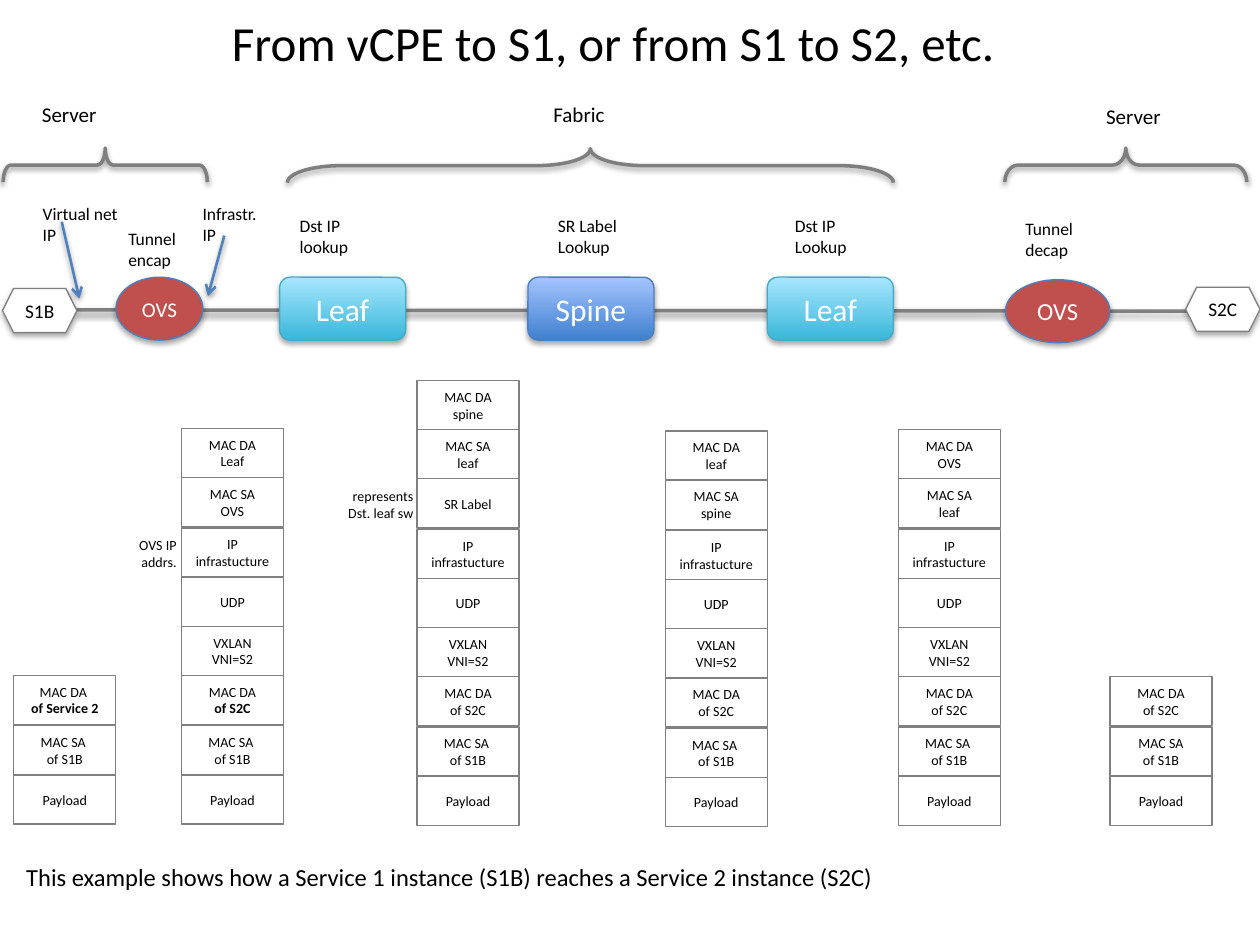
"""Draw the packet header stacks along the path from service S1B to service S2C."""
from dataclasses import dataclass
from typing import Optional

from lxml import etree
from pptx import Presentation, util as u
from pptx.dml.color import RGBColor
from pptx.enum import shapes as s, text as t
from pptx.oxml import ns

PX = u.Inches(1) // 100
LEFT, CENTER, RIGHT = t.PP_ALIGN.LEFT, t.PP_ALIGN.CENTER, t.PP_ALIGN.RIGHT


@dataclass(frozen=True)
class Theme:
    font: str = "Calibri"
    ink: str = "000000"
    white: str = "FFFFFF"
    gray: str = "808080"
    brace: str = "7F7F7F"
    arrow: str = "4F81BD"
    red: str = "C0504D"
    blue_edge: str = "4B7EBC"
    leaf_edge: str = "46AAC5"
    leaf: tuple = ("39B7D8", "A7E6FF")
    spine: tuple = ("3F80CE", "A4C4FF")
    title: int = 28
    device: int = 18
    large: int = 14
    heading: int = 12
    host: int = 11
    note: int = 10
    cell: int = 8
    node_shadow: tuple = (35000, 23000)
    line_shadow: tuple = (38000, 20000)


THEME = Theme()


@dataclass(frozen=True)
class Node:
    text: str
    box: tuple
    kind: s.MSO_SHAPE
    fill: tuple
    edge: str
    size: int
    color: str = THEME.white


@dataclass(frozen=True)
class Label:
    text: str
    box: tuple
    size: int = THEME.note
    align: t.PP_ALIGN = LEFT


@dataclass(frozen=True)
class Stack:
    left: int
    last_top: int
    rows: tuple
    bold: str = ""


@dataclass(frozen=True)
class Brace:
    box: tuple
    curve: float


@dataclass(frozen=True)
class Line:
    ends: tuple
    color: str = THEME.arrow
    width: float = 1.5
    arrow: bool = True


def leaf(left: int) -> Node:
    """Describe a leaf switch."""
    return Node("Leaf", (left, 220, 100, 50), s.MSO_SHAPE.ROUNDED_RECTANGLE,
                THEME.leaf, THEME.leaf_edge, THEME.device)


def switch(box: tuple, size: int) -> Node:
    """Describe a virtual switch."""
    return Node("OVS", box, s.MSO_SHAPE.OVAL, (THEME.red,), THEME.blue_edge, size)


def host(name: str, left: int, top: int) -> Node:
    """Describe a service instance."""
    return Node(name, (left, top, 59, 35), s.MSO_SHAPE.HEXAGON, (THEME.white,),
                THEME.gray, THEME.host, THEME.ink)


NODES = (
    leaf(222),
    Node("Spine", (419, 220, 100, 50), s.MSO_SHAPE.ROUNDED_RECTANGLE,
         THEME.spine, THEME.blue_edge, THEME.device),
    leaf(609),
    switch((798, 222, 83, 50), THEME.large),
    switch((92, 220, 69, 50), THEME.heading),
    host("S1B", 2, 229),
    host("S2C", 941, 228),
)
SOURCE = ("MAC SA \nof S1B", "Payload")
TUNNEL = ("IP\ninfrastucture", "UDP", "VXLAN\nVNI=S2", "MAC DA\nof S2C") + SOURCE
STACKS = (
    Stack(11, 615, ("MAC DA \nof Service 2",) + SOURCE, "of Service 2"),
    Stack(144, 615, ("MAC DA\nLeaf", "MAC SA\nOVS") + TUNNEL, "of S2C"),
    Stack(331, 616, ("MAC DA\nspine", "MAC SA\nleaf", "SR Label") + TUNNEL),
    Stack(528, 617, ("MAC DA\nleaf", "MAC SA\nspine") + TUNNEL),
    Stack(713, 616, ("MAC DA\nOVS", "MAC SA\nleaf") + TUNNEL),
    Stack(881, 616, ("MAC DA\nof S2C", "MAC SA\nof S1B", "Payload")),
)
BRACES = (
    Brace((455, -109, 27, 481), 1.59),
    Brace((880, 35, 27, 192), 0.39),
    Brace((70, 50, 27, 162), 0.23),
)
LABELS = (
    Label("Fabric", (370, 76, 179, 30), THEME.heading, CENTER),
    Label("Server", (810, 77, 179, 30), THEME.heading, CENTER),
    Label("Server", (2, 76, 106, 30), THEME.heading, CENTER),
    Label("represents\nDst. leaf sw", (253, 382, 85, 37), THEME.cell, RIGHT),
    Label("OVS IP addrs.", (89, 421, 61, 37), THEME.cell, RIGHT),
    Label("Dst IP\nlookup", (228, 166, 76, 44)),
    Label("SR Label Lookup", (433, 166, 76, 44)),
    Label("Dst IP Lookup", (621, 166, 76, 44)),
    Label("Infrastr.\nIP", (151, 156, 76, 44)),
    Label("Virtual net\nIP", (24, 156, 85, 44)),
    Label("Tunnel decap", (804, 168, 76, 44)),
    Label("Tunnel encap", (92, 176, 76, 44)),
    Label("This example shows how a Service 1 instance (S1B) reaches a Service 2 instance (S2C)",
          (11, 679, 965, 34), THEME.large),
)
BACKBONE = Line((61, 246, 944, 247), THEME.gray, 2, False)
ARROWS = (Line((178, 187, 165, 235)), Line((49, 176, 63, 237)))


def emu(lengths: tuple) -> list:
    """Turn px lengths into EMU."""
    return [length * PX for length in lengths]


def assign(target, values: dict) -> None:
    """Set each named attribute of the target."""
    for name, value in values.items():
        setattr(target, name, value)


def write(shape, text: str, size: int, color: str = THEME.ink, align=CENTER,
          bold: str = "", **frame_values) -> None:
    """Fill a shape with formatted paragraphs."""
    frame = shape.text_frame
    frame.text = text
    assign(frame, {"word_wrap": True, **frame_values})
    for paragraph in frame.paragraphs:
        paragraph.alignment = align
        for run in paragraph.runs:
            assign(run.font, {"name": THEME.font, "size": u.Pt(size),
                              "bold": run.text == bold})
            run.font.color.rgb = RGBColor.from_string(color)


def outline(shape, color: str, width: float, shadow: Optional[tuple] = None) -> None:
    """Set the line of a shape and its downward shadow, if any."""
    shape.line.color.rgb = RGBColor.from_string(color)
    shape.line.width = u.Pt(width)
    effects = etree.SubElement(shape._element.spPr, ns.qn("a:effectLst"))
    if shadow:
        alpha, distance = shadow
        outer = etree.SubElement(effects, ns.qn("a:outerShdw"), blurRad="40000",
                                 dist=str(distance), dir="5400000", rotWithShape="0")
        tint = etree.SubElement(outer, ns.qn("a:srgbClr"), val=THEME.ink)
        etree.SubElement(tint, ns.qn("a:alpha"), val=str(alpha))


def draw_line(slide, line: Line) -> None:
    """Draw a straight line or arrow."""
    connector = slide.shapes.add_connector(s.MSO_CONNECTOR.STRAIGHT, *emu(line.ends))
    outline(connector, line.color, line.width, THEME.line_shadow)
    if line.arrow:
        stroke = connector._element.spPr.find(ns.qn("a:ln"))
        etree.SubElement(stroke, ns.qn("a:tailEnd"), type="arrow")


def draw_node(slide, node: Node) -> None:
    """Draw a network element with a plain or graded fill."""
    shape = slide.shapes.add_shape(node.kind, *emu(node.box))
    if len(node.fill) == 1:
        shape.fill.solid()
        shape.fill.fore_color.rgb = RGBColor.from_string(node.fill[0])
    else:
        shape.fill.gradient()
        shape.fill.gradient_angle = 90
        for stop, color in zip(shape.fill.gradient_stops, node.fill):
            stop.color.rgb = RGBColor.from_string(color)
    outline(shape, node.edge, 0.75, THEME.node_shadow)
    write(shape, node.text, node.size, node.color, margin_left=0, margin_right=0,
          vertical_anchor=t.MSO_ANCHOR.MIDDLE)


def draw_stack(slide, stack: Stack) -> None:
    """Draw the headers of one packet, ending at the payload."""
    for height, text in enumerate(reversed(stack.rows)):
        top = stack.last_top - round(39.3 * height)
        cell = slide.shapes.add_shape(s.MSO_SHAPE.RECTANGLE, *emu((stack.left, top, 81, 39)))
        cell.fill.background()
        outline(cell, THEME.gray, 0.75)
        write(cell, text, THEME.cell, bold=stack.bold, vertical_anchor=t.MSO_ANCHOR.MIDDLE)


def draw_brace(slide, brace: Brace) -> None:
    """Draw a brace turned to open downward."""
    shape = slide.shapes.add_shape(s.MSO_SHAPE.LEFT_BRACE, *emu(brace.box))
    shape.rotation = 90
    shape.adjustments[0], shape.adjustments[1] = brace.curve, 0.5
    shape.fill.background()
    outline(shape, THEME.brace, 2, THEME.line_shadow)


def draw_label(slide, label: Label) -> None:
    """Write a free-standing label."""
    write(slide.shapes.add_textbox(*emu(label.box)), label.text, label.size,
          align=label.align, auto_size=t.MSO_AUTO_SIZE.SHAPE_TO_FIT_TEXT)


def main() -> None:
    """Build and save the slide."""
    presentation = Presentation()
    assign(presentation, {"slide_width": 1000 * PX, "slide_height": 750 * PX})
    slide = presentation.slides.add_slide(presentation.slide_layouts[5])
    title = slide.shapes.title
    assign(title, dict(zip(("left", "top", "width", "height"), emu((144, 5, 685, 57)))))
    write(title, "From vCPE to S1, or from S1 to S2, etc.", THEME.title,
          vertical_anchor=t.MSO_ANCHOR.TOP, auto_size=t.MSO_AUTO_SIZE.NONE)
    for draw, items in ((draw_line, (BACKBONE,)), (draw_node, NODES), (draw_stack, STACKS),
                        (draw_brace, BRACES), (draw_label, LABELS), (draw_line, ARROWS)):
        for item in items:
            draw(slide, item)
    presentation.save("out.pptx")


if __name__ == "__main__":
    main()
